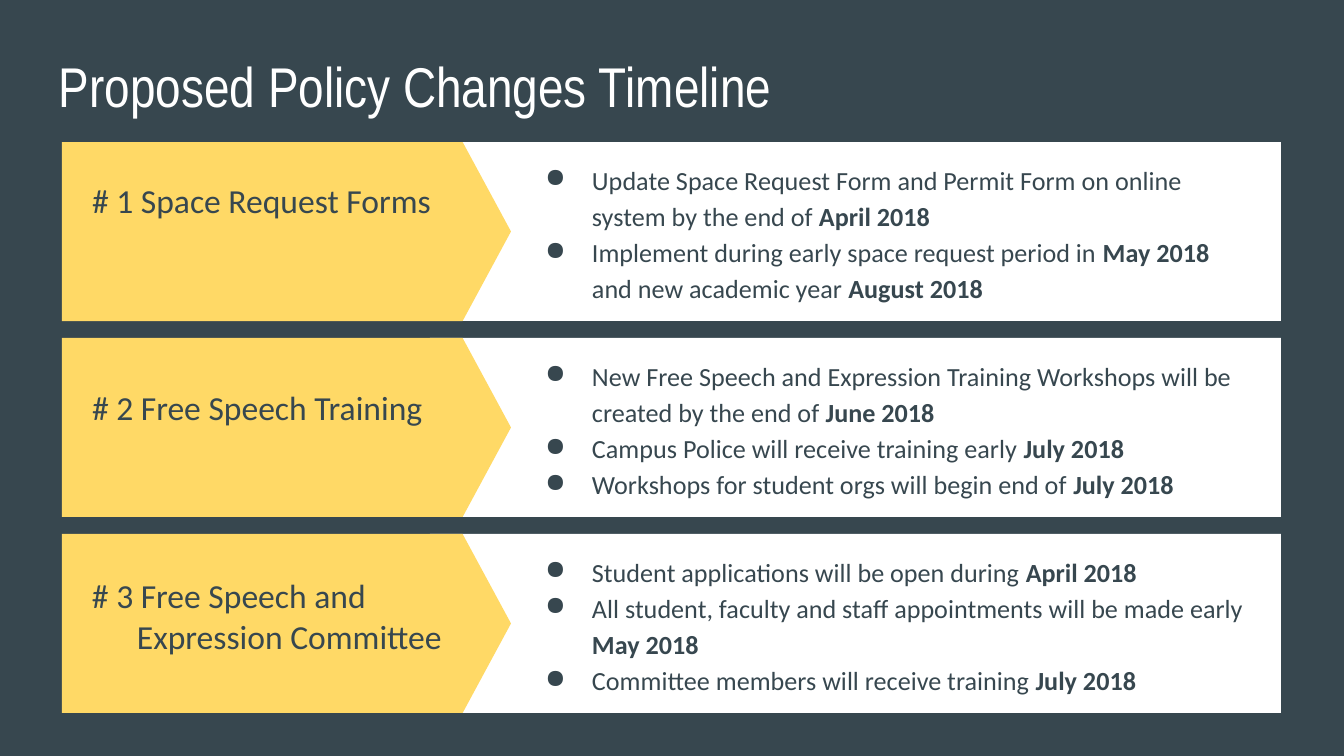
from lxml import etree
from pptx import Presentation
from pptx.dml.color import RGBColor
from pptx.enum.shapes import MSO_SHAPE
from pptx.enum.text import MSO_ANCHOR, MSO_AUTO_SIZE, PP_ALIGN
from pptx.oxml.ns import qn
from pptx.util import Pt

RECT, ARROW = MSO_SHAPE.RECTANGLE, MSO_SHAPE.PENTAGON
TOP, MIDDLE = MSO_ANCHOR.TOP, MSO_ANCHOR.MIDDLE
LEFT, NO_FIT = PP_ALIGN.LEFT, MSO_AUTO_SIZE.NONE
DARK, GOLD, WHITE = "37474F", "FFD966", "FFFFFF"

TITLE = "Proposed Policy Changes Timeline"
ROWS = [
    {"label": "# 1 Space Request Forms", "drop": 0, "wide": 399, "items": [
        [("Update Space Request Form and Permit Form on online system by the end of ", False),
         ("April 2018", True)],
        [("Implement during early space request period in ", False), ("May 2018", True),
         (" and new academic year ", False), ("August 2018", True)],
    ]},
    {"label": "# 2 Free Speech Training", "drop": 11, "wide": 399, "items": [
        [("New Free Speech and Expression Training Workshops will be created by the end of ", False),
         ("June 2018", True)],
        [("Campus Police will receive training early ", False), ("July 2018", True)],
        [("Workshops for student orgs will begin end of ", False), ("July 2018", True)],
    ]},
    {"label": "# 3 Free Speech and\vExpression Committee", "drop": 23, "wide": 449, "items": [
        [("Student applications will be open during ", False), ("April 2018", True)],
        [("All student, faculty and staff appointments will be made early ", False),
         ("May 2018", True)],
        [("Committee members will receive training ", False), ("July 2018", True)],
    ]},
]
FIRST, STEP, TALL = 142, 196, 179


def px(n):
    return round(n * 914400 / 134.4)


def color(code):
    return RGBColor.from_string(code)


def style(font, size, code, name="Calibri", bold=False):
    for key, val in {"size": Pt(size), "name": name, "bold": bold}.items():
        setattr(font, key, val)
    font.color.rgb = color(code)


def frame(shape, anchor):
    form = {"word_wrap": True, "auto_size": NO_FIT, "vertical_anchor": anchor}
    for side in ("left", "right", "top", "bottom"):
        form["margin_" + side] = px(13)
    for key, val in form.items():
        setattr(shape.text_frame, key, val)
    return shape.text_frame


def indent(para, left, hang):
    props = para._p.get_or_add_pPr()
    props.set("marL", str(px(left)))
    props.set("indent", str(px(-hang)))
    return props


def bullet(para):
    props = indent(para, 67, 47)
    tint = etree.SubElement(props, qn("a:buClr"))
    etree.SubElement(tint, qn("a:srgbClr")).set("val", DARK)
    etree.SubElement(props, qn("a:buChar")).set("char", "●")


def panel(kind, box, code):
    shape = slide.shapes.add_shape(kind, *map(px, box))
    shape.shadow.inherit = False
    shape.fill.solid()
    shape.fill.fore_color.rgb = color(code)
    shape.line.fill.background()
    return shape


def textbox(box):
    return frame(slide.shapes.add_textbox(*map(px, box)), MIDDLE)


deck = Presentation()
deck.slide_width, deck.slide_height = px(1344), px(756)
slide = deck.slides.add_slide(deck.slide_layouts[5])
slide.background.fill.solid()
slide.background.fill.fore_color.rgb = color(DARK)

title = slide.shapes.title
for key, val in {"left": 46, "top": 39, "width": 1253, "height": 85}.items():
    setattr(title, key, px(val))
frame(title, TOP).text = TITLE
head = title.text_frame.paragraphs[0]
head.alignment = LEFT
style(head.runs[0].font, 30, WHITE, "Arial Narrow")

for i, row in enumerate(ROWS):
    top = FIRST + i * STEP
    panel(RECT, (430, top, 851, TALL), WHITE)
    panel(ARROW, (62, top, 449, TALL), GOLD).adjustments[0] = 0.27

    label = textbox((79, top + row["drop"], row["wide"], 117))
    label.text = row["label"]
    para = label.paragraphs[0]
    indent(para, 45, 45)
    for run in para.runs:
        style(run.font, 18, DARK)

    body = textbox((512, top, 751, TALL))
    for j, item in enumerate(row["items"]):
        para = body.add_paragraph() if j else body.paragraphs[0]
        para.line_spacing = 1.15
        bullet(para)
        for words, bold in item:
            run = para.add_run()
            run.text = words
            style(run.font, 14, DARK, bold=bold)

deck.save("out.pptx")
